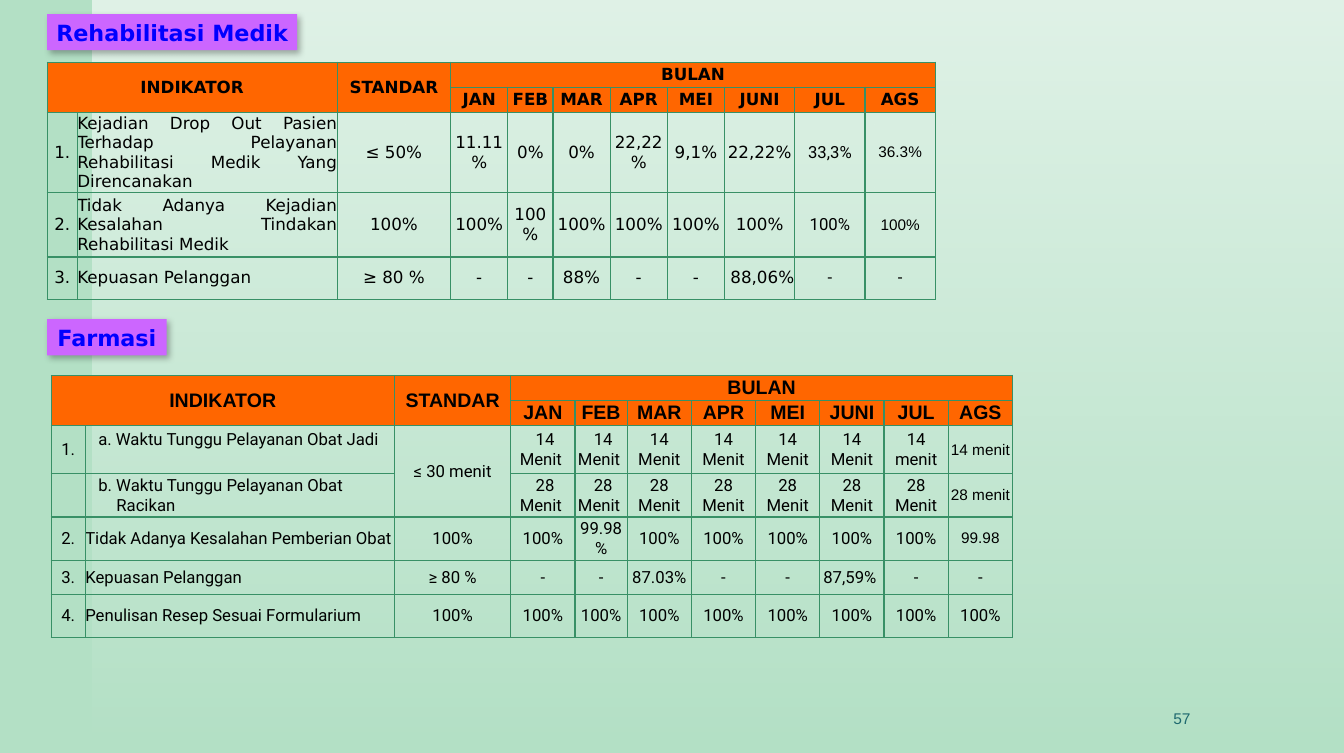
from lxml import etree
from pptx import Presentation
from pptx.dml.color import RGBColor
from pptx.enum.shapes import MSO_SHAPE
from pptx.enum.text import MSO_ANCHOR, MSO_AUTO_SIZE, PP_ALIGN
from pptx.oxml import parse_xml
from pptx.oxml.ns import nsdecls, qn
from pptx.util import Inches, Pt

RECTANGLE = MSO_SHAPE.RECTANGLE
MIDDLE = MSO_ANCHOR.MIDDLE
FIT_SHAPE = MSO_AUTO_SIZE.SHAPE_TO_FIT_TEXT
LEFT, CENTER, RIGHT, JUSTIFY = PP_ALIGN.LEFT, PP_ALIGN.CENTER, PP_ALIGN.RIGHT, PP_ALIGN.JUSTIFY

COLORS = {
    "mint": "B3E0C5", "white": "FFFFFF", "black": "000000", "purple": "CC66FF",
    "blue": "0000FF", "orange": "FF6600", "green": "389066", "teal": "1F696F",
}
MONTHS = ["JAN", "FEB", "MAR", "APR", "MEI", "JUNI", "JUL", "AGS"]
HEADER = [
    ["INDIKATOR", "", "STANDAR", "BULAN"] + [""] * 7,
    ["", "", ""] + MONTHS,
]
HEADER_SPANS = [(0, 0, 1, 1), (0, 2, 1, 2), (0, 3, 0, 10)]
SMALL = ("Arial", 11)
ROBOTO = ("Roboto", 12)

REHAB = {
    "cols": [0.3, 2.59, 1.13, 0.57, 0.45, 0.57, 0.57, 0.57, 0.7, 0.7, 0.7],
    "rows": [0.25, 0.25, 0.8, 0.64, 0.42],
    "head": ("DejaVu Sans", 12),
    "body": ("DejaVu Sans", 12),
    "indicator_align": JUSTIFY,
    "spans": HEADER_SPANS,
    "styles": {(2, 9): ROBOTO, (3, 9): ROBOTO, (4, 9): ROBOTO, (4, 10): ROBOTO,
               (2, 10): SMALL, (3, 10): SMALL},
    "cells": HEADER + [
        ["1.", "Kejadian Drop Out Pasien Terhadap Pelayanan Rehabilitasi Medik Yang Direncanakan",
         "≤ 50%", "11.11%", "0%", "0%", "22,22%", "9,1%", "22,22%", "33,3%", "36.3%"],
        ["2.", "Tidak Adanya Kejadian Kesalahan Tindakan Rehabilitasi Medik"] + ["100%"] * 9,
        ["3.", "Kepuasan Pelanggan", "≥ 80 %", "-", "-", "88%", "-", "-", " 88,06%", "-", "-"],
    ],
}
FARMASI = {
    "cols": [0.34, 3.08, 1.16, 0.64, 0.52] + [0.64] * 6,
    "rows": [0.25, 0.25, 0.48, 0.43, 0.43, 0.34, 0.43],
    "head": ("Arial", 14),
    "body": ROBOTO,
    "indicator_align": LEFT,
    "spans": HEADER_SPANS + [(2, 2, 3, 2)],
    "styles": {(row, 10): SMALL for row in (2, 3, 4)},
    "cells": HEADER + [
        ["1.", "a. Waktu Tunggu Pelayanan Obat Jadi", "≤ 30 menit"]
        + [" 14 Menit "] * 2 + ["14 Menit"] * 4 + ["14 menit"] * 2,
        ["", "b. Waktu Tunggu Pelayanan Obat Racikan", ""]
        + [" 28 Menit "] * 2 + ["28 Menit"] * 5 + ["28 menit"],
        ["2.", "Tidak Adanya Kesalahan Pemberian Obat", "100%", "100%", "99.98%"]
        + ["100%"] * 5 + ["99.98"],
        ["3.", "Kepuasan Pelanggan", "≥ 80 %", "-", "-", "87.03%", "-", "-", "87,59% ", "-", "-"],
        ["4.", "Penulisan Resep Sesuai Formularium"] + ["100%"] * 9,
    ],
}


def rgb(name):
    return RGBColor.from_string(COLORS[name])


def write(frame, text, style, color, align, bold=False):
    """Fill a text frame with one formatted paragraph."""
    frame.text = text
    paragraph = frame.paragraphs[0]
    paragraph.alignment = align
    for run in paragraph.runs:
        run.font.name, run.font.size = style[0], Pt(style[1])
        run.font.bold = bold
        run.font.color.rgb = rgb(color)


def add_backdrop(slide, left, top, width, height):
    """Mint background with a white veil that fades downwards."""
    slide.background.fill.solid()
    slide.background.fill.fore_color.rgb = rgb("mint")
    veil = slide.shapes.add_shape(
        RECTANGLE, Inches(left), Inches(top), Inches(width), Inches(height))
    veil.shadow.inherit = False
    veil.line.fill.background()
    veil.fill.gradient()
    veil.fill.gradient_angle = 270
    for stop, position, opacity in zip(veil.fill.gradient_stops, (0, 1), (60000, 0)):
        stop.position = position
        stop.color.rgb = rgb("white")
    for tint, opacity in zip(veil._element.spPr.iter(qn("a:srgbClr")), (60000, 0)):
        etree.SubElement(tint, qn("a:alpha")).set("val", str(opacity))


def add_heading(slide, text, left, top, width, height=0.36):
    heading = slide.shapes.add_shape(
        RECTANGLE, Inches(left), Inches(top), Inches(width), Inches(height))
    heading.fill.solid()
    heading.fill.fore_color.rgb = rgb("purple")
    heading.line.fill.background()
    heading.shadow.inherit = False
    heading._element.spPr.find(qn("a:effectLst")).append(parse_xml(
        f'<a:outerShdw {nsdecls("a")} blurRad="{Pt(4.5)}" dist="{Pt(2.6)}" dir="{53 * 60000}" '
        f'algn="tl" rotWithShape="0"><a:srgbClr val="{COLORS["black"]}">'
        '<a:alpha val="30000"/></a:srgbClr></a:outerShdw>'))
    frame = heading.text_frame
    frame.margin_left = frame.margin_right = Inches(0.09)
    frame.margin_top = frame.margin_bottom = Inches(0.04)
    frame.word_wrap = False
    frame.auto_size = FIT_SHAPE
    write(frame, text, ("DejaVu Sans", 16), "blue", CENTER, bold=True)


def set_borders(cell):
    properties = cell._tc.get_or_add_tcPr()
    for side in ("lnL", "lnR", "lnT", "lnB"):
        properties.append(parse_xml(
            f'<a:{side} {nsdecls("a")} w="{Pt(1)}"><a:solidFill>'
            f'<a:srgbClr val="{COLORS["green"]}"/></a:solidFill></a:{side}>'))


def hang(cell, margin, first_line):
    """Give a lettered item its hanging indent."""
    properties = cell.text_frame.paragraphs[0]._p.get_or_add_pPr()
    properties.set("marL", str(Inches(margin)))
    properties.set("indent", str(Inches(first_line)))


def add_indicator_table(slide, data, left, top):
    cols, rows = data["cols"], data["rows"]
    table = slide.shapes.add_table(
        len(rows), len(cols), Inches(left), Inches(top),
        Inches(sum(cols)), Inches(sum(rows))).table
    table.first_row = table.horz_banding = False
    for column, width in zip(table.columns, cols):
        column.width = Inches(width)
    for row, height in zip(table.rows, rows):
        row.height = Inches(height)
    for r, texts in enumerate(data["cells"]):
        is_header = r < len(HEADER)
        for c, text in enumerate(texts):
            cell = table.cell(r, c)
            set_borders(cell)
            cell.margin_left = cell.margin_right = cell.margin_top = cell.margin_bottom = 0
            cell.vertical_anchor = MIDDLE
            if is_header:
                cell.fill.solid()
                cell.fill.fore_color.rgb = rgb("orange")
            else:
                cell.fill.background()
            style = data["head"] if is_header else data["styles"].get((r, c), data["body"])
            align = data["indicator_align"] if c == 1 and not is_header else CENTER
            write(cell.text_frame, text, style, "black", align, bold=is_header)
    for first_row, first_col, last_row, last_col in data["spans"]:
        table.cell(first_row, first_col).merge(table.cell(last_row, last_col))
    return table


def add_page_number(slide, text, left, top, width, height):
    number = slide.shapes.add_textbox(
        Inches(left), Inches(top), Inches(width), Inches(height))
    number.text_frame.word_wrap = True
    number.text_frame.vertical_anchor = MIDDLE
    write(number.text_frame, text, ("Arial", 11.1), "teal", RIGHT)


def main():
    deck = Presentation()
    deck.slide_width, deck.slide_height = Inches(13.39), Inches(7.5)
    slide = deck.slides.add_slide(deck.slide_layouts[6])
    add_backdrop(slide, 0.92, 0, 12.47, 7.5)
    add_page_number(slide, "57", 8.84, 6.95, 3.12, 0.4)
    add_heading(slide, "Rehabilitasi Medik", 0.47, 0.14, 2.49)
    add_indicator_table(slide, REHAB, 0.47, 0.62)
    pharmacy = add_indicator_table(slide, FARMASI, 0.51, 3.74)
    hang(pharmacy.cell(2, 1), 0.37, -0.24)
    pharmacy.cell(2, 1).margin_bottom = Inches(0.2)
    hang(pharmacy.cell(3, 1), 0.31, -0.18)
    add_heading(slide, "Farmasi", 0.47, 3.18, 1.19)
    deck.save("out.pptx")


if __name__ == "__main__":
    main()
